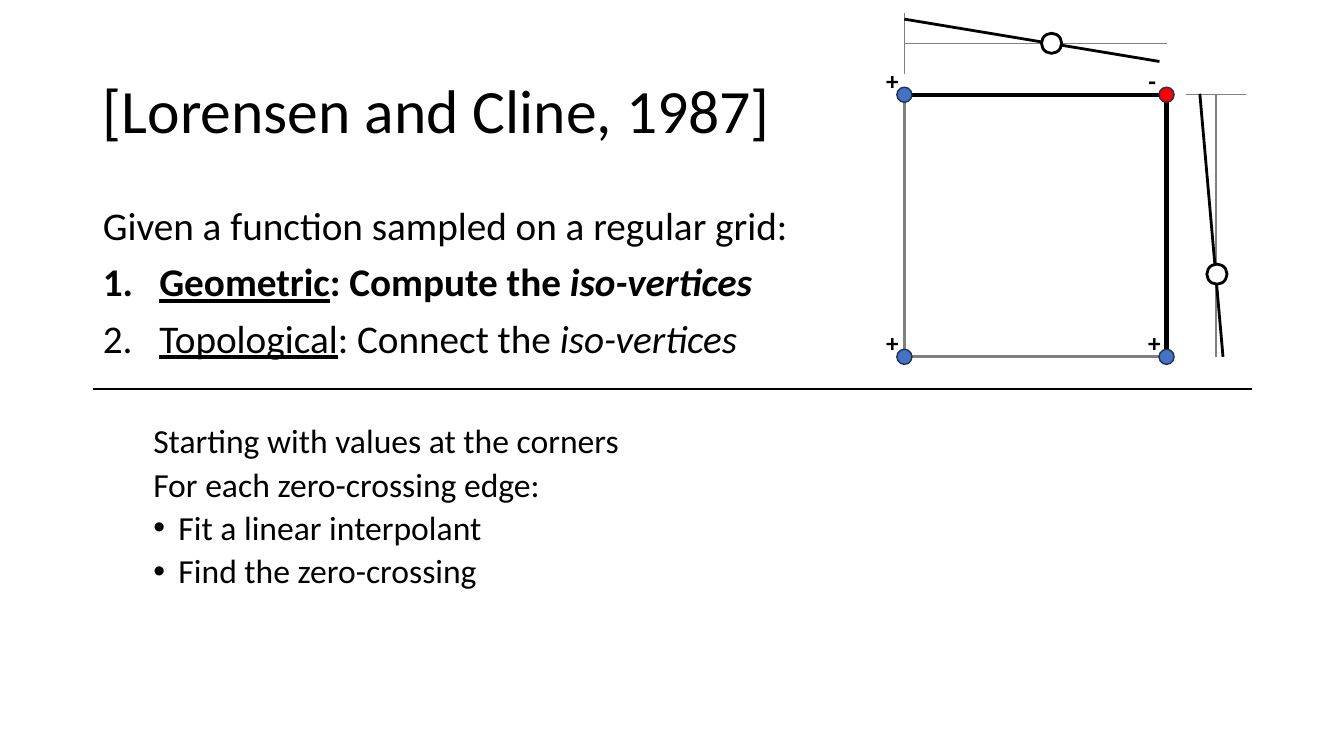
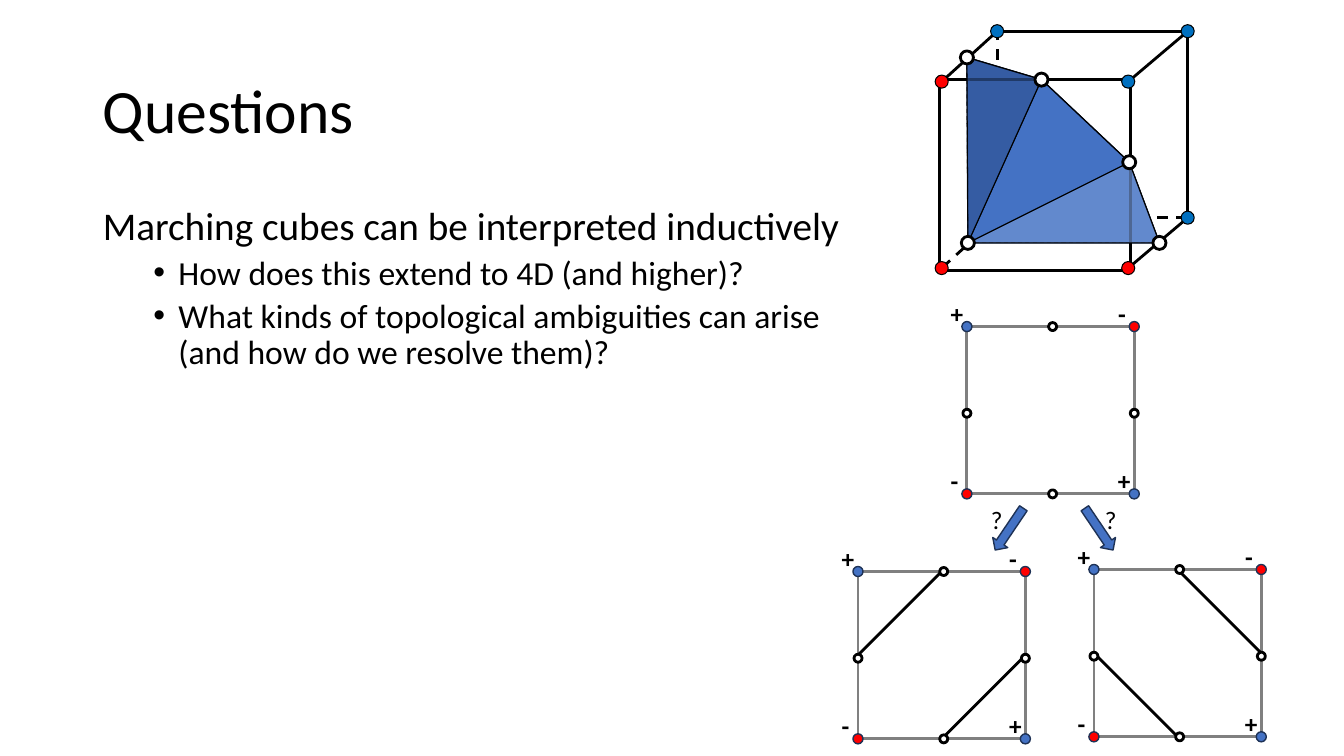
from dataclasses import dataclass
from typing import Optional

from lxml import etree
from pptx import Presentation
from pptx import util as u
from pptx.dml.color import RGBColor
from pptx.enum import dml, shapes, text
from pptx.oxml.ns import qn

Point = tuple[float, float]

FONT = "Calibri"
INK = {
    "black": "000000", "white": "FFFFFF", "gray": "808080", "navy": "1E3256",
    "blue": "4472C4", "red": "FF0000", "azure": "0070C0",
    "light": "7093D2", "dark": "2F5395",
}
KIND = shapes.MSO_SHAPE
TOP, LEFT, BOTTOM, RIGHT = range(4)
SIGNS = {"+": ("blue", 0.33), "-": ("red", 0.28)}
SIZES = (28, 24)
HANGS = (0.56, 0.25)
MARKS = {
    "": [("a:buNone", {})],
    "1.": [("a:buFont", {"typeface": "+mj-lt"}), ("a:buAutoNum", {"type": "arabicPeriod"})],
    "•": [("a:buFont", {"typeface": "Arial"}), ("a:buChar", {"char": "•"})],
}


@dataclass
class Item:
    runs: list[tuple[str, str]]
    level: int = 0
    mark: str = ""
    gap: float = 10


@dataclass
class Cell:
    x: float
    y: float
    side: float
    signs: str
    dot: float
    shift: Point


@dataclass
class Stroke:
    start: Point
    end: Point
    width: float = 2
    ink: str = "black"
    dash: bool = False


def grid(x: float, y: float, w: float, h: float) -> list[Point]:
    return [(x, y), (x + w, y), (x, y + h), (x + w, y + h)]


def rgb(ink: str) -> RGBColor:
    return RGBColor.from_string(INK[ink])


def style(run, size: float, marks: str = "") -> None:
    font = run.font
    font.name, font.size = FONT, u.Pt(size)
    font.color.rgb = rgb("black")
    font.bold, font.italic, font.underline = ("b" in marks, "i" in marks, "u" in marks)


def paint(shape, fill: Optional[str], ink: str, width: float) -> None:
    shape.shadow.inherit = False
    if fill:
        shape.fill.solid()
        shape.fill.fore_color.rgb = rgb(fill)
    else:
        shape.fill.background()
    shape.line.color.rgb = rgb(ink)
    shape.line.width = u.Pt(width)


def block(slide, kind, x: float, y: float, w: float, h: float,
          fill: Optional[str], ink: str, width: float):
    shape = slide.shapes.add_shape(kind, u.Inches(x), u.Inches(y), u.Inches(w), u.Inches(h))
    paint(shape, fill, ink, width)
    return shape


def square(slide, x: float, y: float, side: float, ink: str):
    return block(slide, KIND.RECTANGLE, x, y, side, side, None, ink, 2)


def dot(slide, spot: Point, size: float, fill: str, ink: str, width: float) -> None:
    x, y = spot
    block(slide, KIND.OVAL, x - size / 2, y - size / 2, size, size, fill, ink, width)


def rings(slide, spots: list[Point], size: float) -> None:
    for spot in spots:
        dot(slide, spot, size, "white", "black", 2)


def draw(slide, stroke: Stroke):
    ends = [u.Inches(v) for v in (*stroke.start, *stroke.end)]
    link = slide.shapes.add_connector(shapes.MSO_CONNECTOR.STRAIGHT, *ends)
    link.line.color.rgb = rgb(stroke.ink)
    link.line.width = u.Pt(stroke.width)
    if stroke.dash:
        link.line.dash_style = dml.MSO_LINE.DASH
    etree.SubElement(link._element.spPr, qn("a:effectLst"))
    return link


def patch(slide, spots: list[Point], fill: str, ink: str, width: float, alpha: int = 100) -> None:
    first, *rest = [(u.Inches(x), u.Inches(y)) for x, y in spots]
    pen = slide.shapes.build_freeform(*first)
    pen.add_line_segments(rest, close=True)
    shape = pen.convert_to_shape()
    paint(shape, fill, ink, width)
    if alpha < 100:
        tint = shape._element.spPr.find(qn("a:solidFill"))[0]
        etree.SubElement(tint, qn("a:alpha"), val=str(alpha * 1000))


def label(slide, words: str, x: float, y: float, w: float, marks: str = "") -> None:
    box = slide.shapes.add_textbox(u.Inches(x), u.Inches(y), u.Inches(w), u.Inches(0.4))
    box.text_frame.word_wrap = False
    box.text_frame.text = words
    style(box.text_frame.paragraphs[0].runs[0], 18, marks)


def corners(slide, cell: Cell) -> None:
    for (x, y), sign in zip(grid(cell.x, cell.y, cell.side, cell.side), cell.signs):
        fill, wide = SIGNS[sign]
        label(slide, sign, x - cell.shift[0], y - cell.shift[1], wide, "b")
        dot(slide, (x, y), cell.dot, fill, "navy", 1)


def bullet(para, item: Item) -> None:
    hang = HANGS[item.level] if item.mark else 0
    props = para._p.get_or_add_pPr()
    props.set("marL", str(u.Inches(0.5 * item.level + hang)))
    props.set("indent", str(u.Inches(-hang)))
    for tag, values in MARKS[item.mark]:
        etree.SubElement(props, qn(tag), values)


def write(para, item: Item) -> None:
    para.level = item.level
    bullet(para, item)
    para.line_spacing = 0.9
    for words, marks in item.runs:
        if words == "\n":
            para.add_line_break()
            continue
        run = para.add_run()
        run.text = words
        style(run, SIZES[item.level], marks)


def place(shape, y: float, h: float):
    shape.left, shape.top = u.Inches(0.92), u.Inches(y)
    shape.width, shape.height = u.Inches(11.5), u.Inches(h)
    frame = shape.text_frame
    frame.word_wrap = True
    frame.auto_size = text.MSO_AUTO_SIZE.NONE
    return frame


def page(deck, title: str, items: list[Item]):
    slide = deck.slides.add_slide(deck.slide_layouts[1])
    head = place(slide.shapes.title, 0.4, 1.45)
    head.vertical_anchor = text.MSO_ANCHOR.MIDDLE
    head.text = title
    para = head.paragraphs[0]
    para.alignment = text.PP_ALIGN.LEFT
    para.line_spacing = 0.9
    style(para.runs[0], 44)

    body = place(slide.placeholders[1], 2, 4.76)
    for n, item in enumerate(items):
        para = body.add_paragraph() if n else body.paragraphs[0]
        write(para, item)
        para.space_before = u.Pt(item.gap if n else 0)
    return slide


def fit(deck) -> None:
    slide = page(deck, "[Lorensen and Cline, 1987]", [
        Item([("Given a function sampled on a regular grid:", "")]),
        Item([("Geometric", "bu"), (": Compute the ", "b"), ("iso-vertices", "bi")], mark="1."),
        Item([("Topological", "u"), (": Connect the ", ""), ("iso-vertices", "i")], mark="1."),
        Item([("Starting with values at the corners", "")], 1, gap=45),
        Item([("For each zero-crossing edge:", "")], 1, gap=5),
        Item([("Fit a linear interpolant", "")], 1, "•", 5),
        Item([("Find the zero-crossing", "")], 1, "•", 5),
    ])
    cell = Cell(8.97, 0.94, 2.6, "+-++", 0.15, (0.28, 0.34))
    square(slide, cell.x, cell.y, cell.side, "gray")
    nw, ne, _, se = grid(cell.x, cell.y, cell.side, cell.side)
    rule = Stroke((0.92, 3.86), (12.42, 3.86))
    axes = [Stroke(start, end, 1, "gray") for start, end in (
        ((8.97, 0.43), (11.57, 0.43)), ((8.97, 0.13), (8.97, 0.73)),
        ((12.06, 0.94), (12.06, 3.54)), ((12.36, 0.94), (11.76, 0.94)))]
    fits = [Stroke((8.97, 0.19), (11.5, 0.61)), Stroke((12.13, 3.54), (11.9, 0.93))]
    edges = [Stroke(nw, ne, 3), Stroke(ne, se, 3)]
    for stroke in (rule, *axes, *fits, *edges):
        draw(slide, stroke)
    corners(slide, cell)
    rings(slide, [(10.43, 0.43), (12.07, 2.72)], 0.2)


def cube(slide) -> None:
    front = grid(9.34, 0.81, 1.85, 1.85)
    back = grid(9.89, 0.31, 1.89, 1.85)
    nw, ne, sw, se = back
    a, b, c, d, e = cut = [(9.59, 0.57), (10.33, 0.79), (11.2, 1.61), (11.5, 2.41), (9.6, 2.41)]

    dot(slide, sw, 0.13, "azure", "black", 0.75)
    for start, end in ((front[2], sw), (sw, nw), (se, sw)):
        draw(slide, Stroke(start, end, dash=True))
    patch(slide, cut, "blue", "navy", 1)

    square(slide, 9.32, 0.79, 1.89, "black")
    for start, end in ((front[0], nw), (front[1], ne), (front[3], se), (ne, nw), (ne, se)):
        draw(slide, Stroke(start, end))
    for spot, fill in zip((*front, nw, ne, se), ["red", "azure", "red", "red"] + ["azure"] * 3):
        dot(slide, spot, 0.13, fill, "black", 0.75)

    for start, end in zip(cut, cut[1:] + cut[:1]):
        draw(slide, Stroke(start, end, 0.75, dash=e in (start, end)))
    for spots, fill in (([d, c, e], "light"), ([c, b, e], "blue"), ([b, a, e], "dark")):
        patch(slide, spots, fill, "black", 0.75, 70)
    rings(slide, cut, 0.13)


def face(slide, x: float, y: float, joins: list[tuple[int, int]]) -> None:
    cell = Cell(x, y, 1.66, "+--+", 0.1, (0.26, 0.33))
    frame = square(slide, x, y, cell.side, "gray")
    for start, end in joins:
        link = draw(slide, Stroke((x, y), (x, y)))
        link.begin_connect(frame, start)
        link.end_connect(frame, end)
    corners(slide, cell)
    mids = [(x + 0.85, y), (x + 0.85, y + cell.side), (x, y + 0.86), (x + cell.side, y + 0.86)]
    rings(slide, mids, 0.08)


def ask(deck) -> None:
    slide = page(deck, "Questions", [
        Item([("Marching cubes can be interpreted inductively", "")]),
        Item([("How does this extend to 4D (and higher)?", "")], 1, "•", 5),
        Item([("What kinds of topological ambiguities can arise", ""), ("\n", ""),
              ("(and how do we resolve them)?", "")], 1, "•", 5),
    ])
    cube(slide)
    face(slide, 8.51, 5.67, [(LEFT, TOP), (BOTTOM, RIGHT)])
    face(slide, 10.85, 5.65, [(BOTTOM, LEFT), (RIGHT, TOP)])
    face(slide, 9.59, 3.24, [])
    for x, turn, mark in ((9.92, 34, 9.73), (10.81, 326, 10.86)):
        arrow = block(slide, KIND.DOWN_ARROW, x, 5, 0.18, 0.5, "blue", "navy", 1)
        arrow.rotation = turn
        label(slide, "?", mark, 4.95, 0.32)


def main() -> None:
    deck = Presentation()
    deck.slide_width, deck.slide_height = u.Inches(13.33), u.Inches(7.5)
    fit(deck)
    ask(deck)
    deck.save("out.pptx")


if __name__ == "__main__":
    main()
